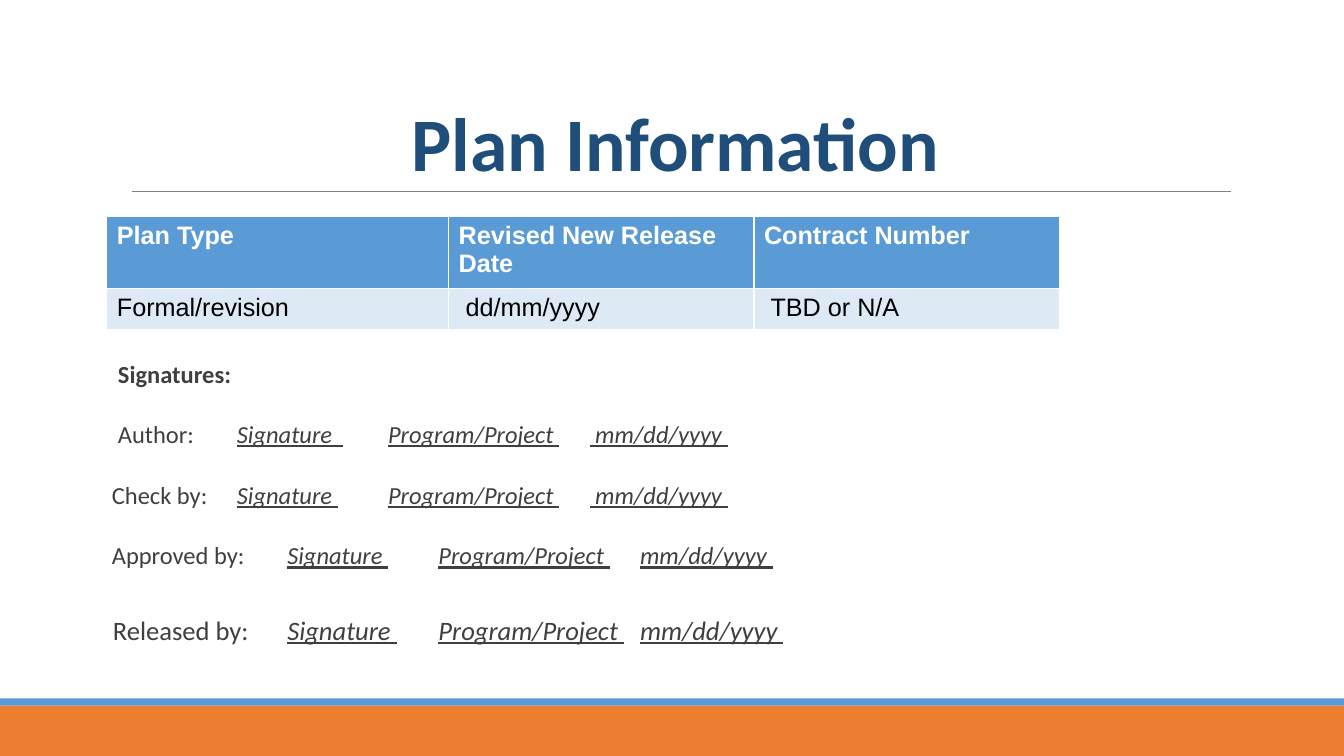
import pptx
import pptx.util
import pptx.dml.color
import pptx.enum.shapes
import pptx.enum.text
import pptx.oxml.ns
import lxml.etree

WIDE, TALL = 133.33, 75
COLORS = {
    "navy": "1E4E79", "blue": "5B9BD5", "pale": "DDEAF6", "orange": "ED7D31",
    "rule": "7F7F7F", "text": "3F3F3F", "white": "FFFFFF", "black": "000000",
}
HEAD = ["Plan Type", "Revised New Release Date", "Contract Number"]
DATA = ["Formal/revision", " dd/mm/yyyy", " TBD or N/A"]
SIGNERS = [
    ("Author:", 3.2, (13.2, 33.2, 53.2), ("Signature  ", "Program/Project ", " mm/dd/yyyy "), 17.5, 27.5),
    ("Check by:", 2.6, (19.3, 32.2, 52.2), ("Signature ", "Program/Project ", " mm/dd/yyyy "), 17.5, 27.5),
    ("Approved by:", 2.6, (19.1, 32.2, 52.2), ("Signature ", "Program/Project ", "mm/dd/yyyy "), 17.5, 27.5),
    ("Released by:", 2.7, (19.2, 40, 60), ("Signature ", "Program/Project ", "mm/dd/yyyy "), 19, 37),
]


def grid(*cells):
    """Turn counts of grid cells, a tenth of an inch each, into lengths."""
    return [pptx.util.Inches(cell / 10) for cell in cells]


def color(name):
    """Look up a named colour."""
    return pptx.dml.color.RGBColor.from_string(COLORS[name])


def style(font, size, tone, bold=False, face="Calibri"):
    """Format a font."""
    font.name, font.size, font.bold = face, pptx.util.Pt(size), bold
    font.color.rgb = color(tone)


def inset(frame, side):
    """Set the margins of a text frame."""
    frame.margin_left, frame.margin_right = grid(side, side)
    frame.margin_top, frame.margin_bottom = grid(0.5, 0.5)
    frame.word_wrap = True
    frame.auto_size = pptx.enum.text.MSO_AUTO_SIZE.NONE


def add_bar(slide, top, high, tone):
    """Draw a band across the whole slide."""
    kind = pptx.enum.shapes.MSO_SHAPE.RECTANGLE
    bar = slide.shapes.add_shape(kind, *grid(0, top, WIDE, high))
    bar.shadow.inherit = False
    bar.fill.solid()
    bar.fill.fore_color.rgb = color(tone)
    bar.line.fill.background()


def add_rule(slide, left, right, top):
    """Draw a thin level line."""
    kind = pptx.enum.shapes.MSO_CONNECTOR.STRAIGHT
    rule = slide.shapes.add_connector(kind, *grid(left, top, right, top))
    rule.line.color.rgb = color("rule")
    rule.line.width = pptx.util.Pt(0.75)
    lxml.etree.SubElement(rule._element.spPr, pptx.oxml.ns.qn("a:effectLst"))


def set_title(slide, text):
    """Place and format the title."""
    title = slide.shapes.title
    title.left, title.top, title.width, title.height = grid(12, 3.1, 110, 15.9)
    frame = title.text_frame
    inset(frame, 1)
    frame.vertical_anchor = pptx.enum.text.MSO_ANCHOR.BOTTOM
    para = frame.paragraphs[0]
    para.text = text
    para.alignment = pptx.enum.text.PP_ALIGN.CENTER
    para.line_spacing = 0.85
    style(para.font, 54, "navy", True)


def add_plan(slide):
    """Build the plan table."""
    wide, tall = (33.9, 30.3, 30.3), (7.1, 4.1)
    place = grid(10.6, 21.5, sum(wide), sum(tall))
    table = slide.shapes.add_table(len(tall), len(wide), *place).table
    for col, size in zip(table.columns, grid(*wide)):
        col.width = size
    looks = [("blue", "white", True), ("pale", "black", False)]
    for row, size, words, look in zip(table.rows, grid(*tall), (HEAD, DATA), looks):
        row.height = size
        fill, tone, bold = look
        for cell, text in zip(row.cells, words):
            cell.fill.solid()
            cell.fill.fore_color.rgb = color(fill)
            para = cell.text_frame.paragraphs[0]
            para.text = text
            style(para.font, 18, tone, bold, "Arial")


def set_para(para, indent, stops, size, before, bold=False):
    """Set spacing, indent, tab stops and font of a paragraph."""
    para.line_spacing = 0.75
    para.space_before = pptx.util.Pt(before)
    props = para._p.get_or_add_pPr()
    props.set("marL", "0")
    props.set("indent", str(grid(indent)[0]))
    tabs = lxml.etree.SubElement(props, pptx.oxml.ns.qn("a:tabLst"))
    for stop in grid(*stops):
        lxml.etree.SubElement(tabs, pptx.oxml.ns.qn("a:tab"), pos=str(stop), algn="l")
    style(para.font, size, "text", bold)


def add_signers(slide):
    """Write the signature lines."""
    frame = slide.shapes.add_textbox(*grid(8.5, 35.8, 113.5, 30)).text_frame
    inset(frame, 0)
    first = frame.paragraphs[0]
    first.text = "Signatures:"
    set_para(first, 3.2, (), 17.5, 0, True)
    for label, indent, stops, blanks, size, before in SIGNERS:
        para = frame.add_paragraph()
        set_para(para, indent, stops, size, before)
        para.add_run().text = label
        for blank in blanks:
            para.add_run().text = "\t"
            run = para.add_run()
            run.text = blank
            run.font.italic = run.font.underline = True


def main():
    """Build and save the slide."""
    deck = pptx.Presentation()
    deck.slide_width, deck.slide_height = grid(WIDE, TALL)
    slide = deck.slides.add_slide(deck.slide_layouts[5])
    add_bar(slide, 70, 5, "orange")
    add_bar(slide, 69.3, 0.7, "blue")
    add_rule(slide, 13.1, 122.1, 19)
    set_title(slide, "Plan Information")
    add_signers(slide)
    add_plan(slide)
    deck.save("out.pptx")


if __name__ == "__main__":
    main()
